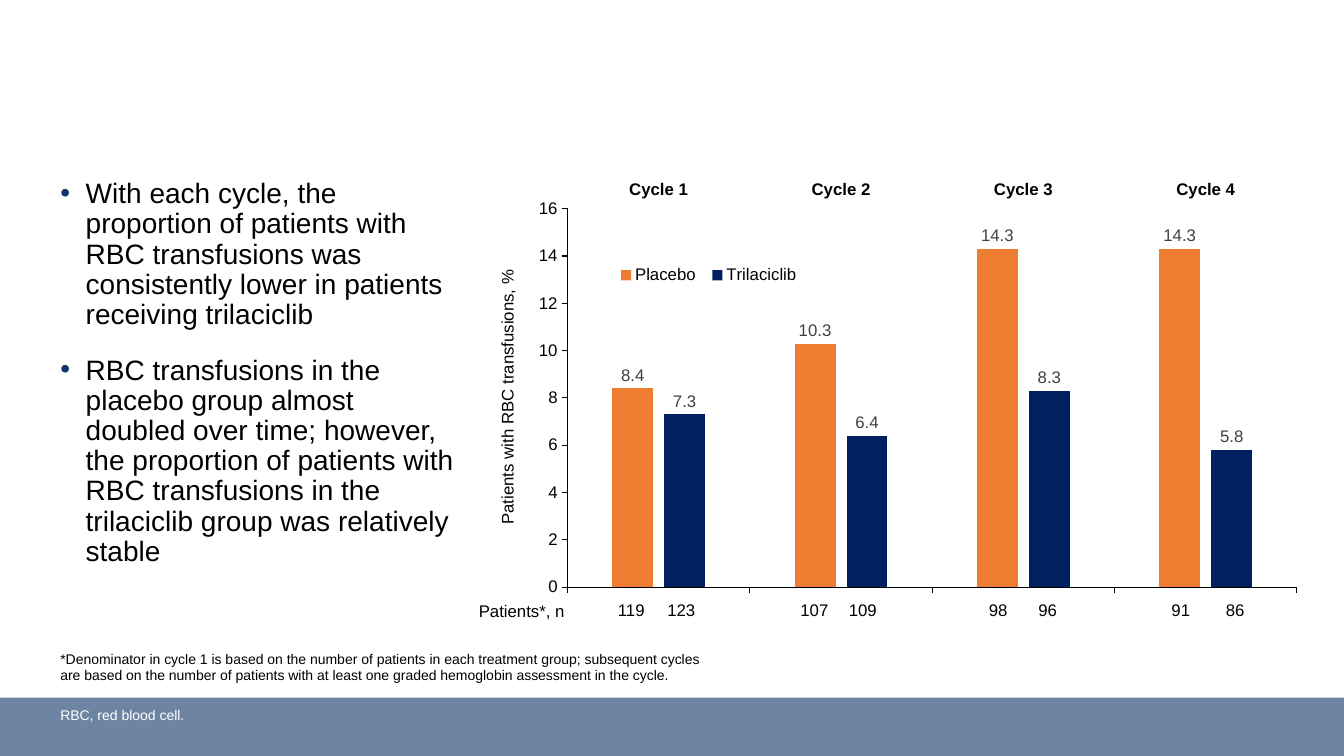
from dataclasses import dataclass

from lxml import etree
from pptx import Presentation
from pptx.chart.data import CategoryChartData
from pptx.dml.color import RGBColor
from pptx.enum.chart import (XL_CHART_TYPE, XL_LABEL_POSITION,
                             XL_LEGEND_POSITION, XL_TICK_LABEL_POSITION,
                             XL_TICK_MARK)
from pptx.enum.shapes import MSO_SHAPE
from pptx.enum.text import PP_ALIGN
from pptx.oxml import parse_xml
from pptx.oxml.ns import nsdecls, qn
from pptx.util import Inches, Pt

LEFT, CENTER = PP_ALIGN.LEFT, PP_ALIGN.CENTER
OUTSIDE, TICK_OUT = XL_LABEL_POSITION.OUTSIDE_END, XL_TICK_MARK.OUTSIDE
NO_TICK, HIGH = XL_TICK_MARK.NONE, XL_TICK_LABEL_POSITION.HIGH
BOTTOM, COLUMNS = XL_LEGEND_POSITION.BOTTOM, XL_CHART_TYPE.COLUMN_CLUSTERED


@dataclass(frozen=True)
class Theme:
    face: str = "Arial"
    black: str = "000000"
    white: str = "FFFFFF"
    gray: str = "404040"
    blue: str = "0C3467"
    navy: str = "002060"
    orange: str = "ED7D31"
    body: int = 20
    label: int = 12
    note: int = 10


theme = Theme()


def write(text, left, top, width, height, size=theme.label, color=theme.black,
          align=LEFT, turn=0):
    box = slide.shapes.add_textbox(Inches(left), Inches(top),
                                   Inches(width), Inches(height))
    box.rotation = turn
    frame = box.text_frame
    frame.word_wrap = True
    for i, line in enumerate(text.split("\n")):
        para = frame.paragraphs[0] if i == 0 else frame.add_paragraph()
        para.alignment = align
        run = para.add_run()
        run.text = line
        run.font.name = theme.face
        run.font.size = Pt(size)
        run.font.color.rgb = RGBColor.from_string(color)
    return frame


def place(parent, index, **spots):
    """Give a chart part a fixed place, as fractions of the chart."""
    for old in parent.findall(qn("c:layout")):
        parent.remove(old)
    layout = parse_xml(f"<c:layout {nsdecls('c')}><c:manualLayout/></c:layout>")
    for tag, value in spots.items():
        etree.SubElement(layout[0], qn(f"c:{tag}")).set("val", str(value))
    parent.insert(index, layout)


prs = Presentation()
prs.slide_width, prs.slide_height = Inches(13.33), Inches(7.5)
slide = prs.slides.add_slide(prs.slide_layouts[6])

# Footer band
band = slide.shapes.add_shape(MSO_SHAPE.RECTANGLE, 0, Inches(6.92),
                              Inches(13.33), Inches(0.58))
band.shadow.inherit = False
band.line.fill.background()
band.fill.solid()
band.fill.fore_color.rgb = RGBColor.from_string(theme.blue)
tint = band.fill._xPr.find(".//" + qn("a:srgbClr"))
etree.SubElement(tint, qn("a:alpha")).set("val", "60000")
write("RBC, red blood cell.", 0.5, 6.96, 6.2, 0.27,
      size=theme.note, color=theme.white)

# Transfusion chart
data = CategoryChartData()
data.categories = [f"Cycle {n}" for n in range(1, 5)]
data.add_series("Placebo", [8.4, 10.3, 14.3, 14.3])
data.add_series("Trilaciclib", [7.3, 6.4, 8.3, 5.8])
chart = slide.shapes.add_chart(COLUMNS, Inches(5.19), Inches(1.71),
                               Inches(7.83), Inches(4.64), data).chart
chart.has_title = False
chart.font.name = theme.face
chart.font.size = Pt(theme.label)
chart.font.color.rgb = RGBColor.from_string(theme.black)

plot = chart.plots[0]
plot.gap_width, plot.overlap = 219, -27
plot.vary_by_categories = False
for series, color in zip(plot.series, (theme.orange, theme.navy)):
    series.format.fill.solid()
    series.format.fill.fore_color.rgb = RGBColor.from_string(color)
    labels = series.data_labels
    labels.show_value = True
    labels.position = OUTSIDE
    labels.font.name = theme.face
    labels.font.size = Pt(theme.label)
    labels.font.color.rgb = RGBColor.from_string(theme.gray)

cycles, share = chart.category_axis, chart.value_axis
for axis in (cycles, share):
    axis.has_major_gridlines = False
    axis.major_tick_mark, axis.minor_tick_mark = TICK_OUT, NO_TICK
    axis.format.line.width = Pt(0.75)
    axis.format.line.color.rgb = RGBColor.from_string(theme.black)
cycles.tick_label_position = HIGH
cycles.tick_labels.font.bold = True
share.minimum_scale, share.maximum_scale, share.major_unit = 0, 16, 2

chart.has_legend = True
chart.legend.position = BOTTOM
chart.legend.include_in_layout = False
place(chart.legend._element, 1, xMode="edge", yMode="edge",
      x=0.11, y=0.19, w=0.25, h=0.06)
place(plot._element.getparent(), 0, layoutTarget="inner", xMode="edge",
      yMode="edge", x=0.056, y=0.078, w=0.924, h=0.809)

write("Patients with RBC transfusions, %", 3.15, 3.79, 3.76, 0.3,
      align=CENTER, turn=270)

# Patient counts under the columns
write("Patients*, n", 4.65, 5.91, 1.21, 0.3)
counts = [(6.03, 119), (6.52, 123), (7.84, 107), (8.32, 109),
          (9.71, 98), (10.2, 96), (11.52, 91), (12.06, 86)]
for left, count in counts:
    write(str(count), left, 5.9, 0.62, 0.3)

write("*Denominator in cycle 1 is based on the number of patients in each "
      "treatment group; subsequent cycles are based on the number of patients "
      "with at least one graded hemoglobin assessment in the cycle.",
      0.5, 6.4, 6.64, 0.44, size=theme.note)

# Key points
points = write(
    "With each cycle, the proportion of patients with RBC transfusions was "
    "consistently lower in patients receiving trilaciclib\n"
    "RBC transfusions in the placebo group almost doubled over time; however, "
    "the proportion of patients with RBC transfusions in the trilaciclib group "
    "was relatively stable", 0.6, 1.78, 3.92, 4.98, size=theme.body)
points.margin_left = points.margin_right = 0
points.margin_top = points.margin_bottom = 0
for para, after in zip(points.paragraphs, (18, 6)):
    props = para._p.get_or_add_pPr()
    props.set("marL", str(Inches(0.25)))
    props.set("indent", str(-Inches(0.25)))
    hue = etree.SubElement(props, qn("a:buClr"))
    etree.SubElement(hue, qn("a:srgbClr")).set("val", theme.blue)
    etree.SubElement(props, qn("a:buFont")).set("typeface", theme.face)
    etree.SubElement(props, qn("a:buChar")).set("char", "•")
    para.line_spacing = 0.9
    para.space_after = Pt(after)

prs.save("out.pptx")
